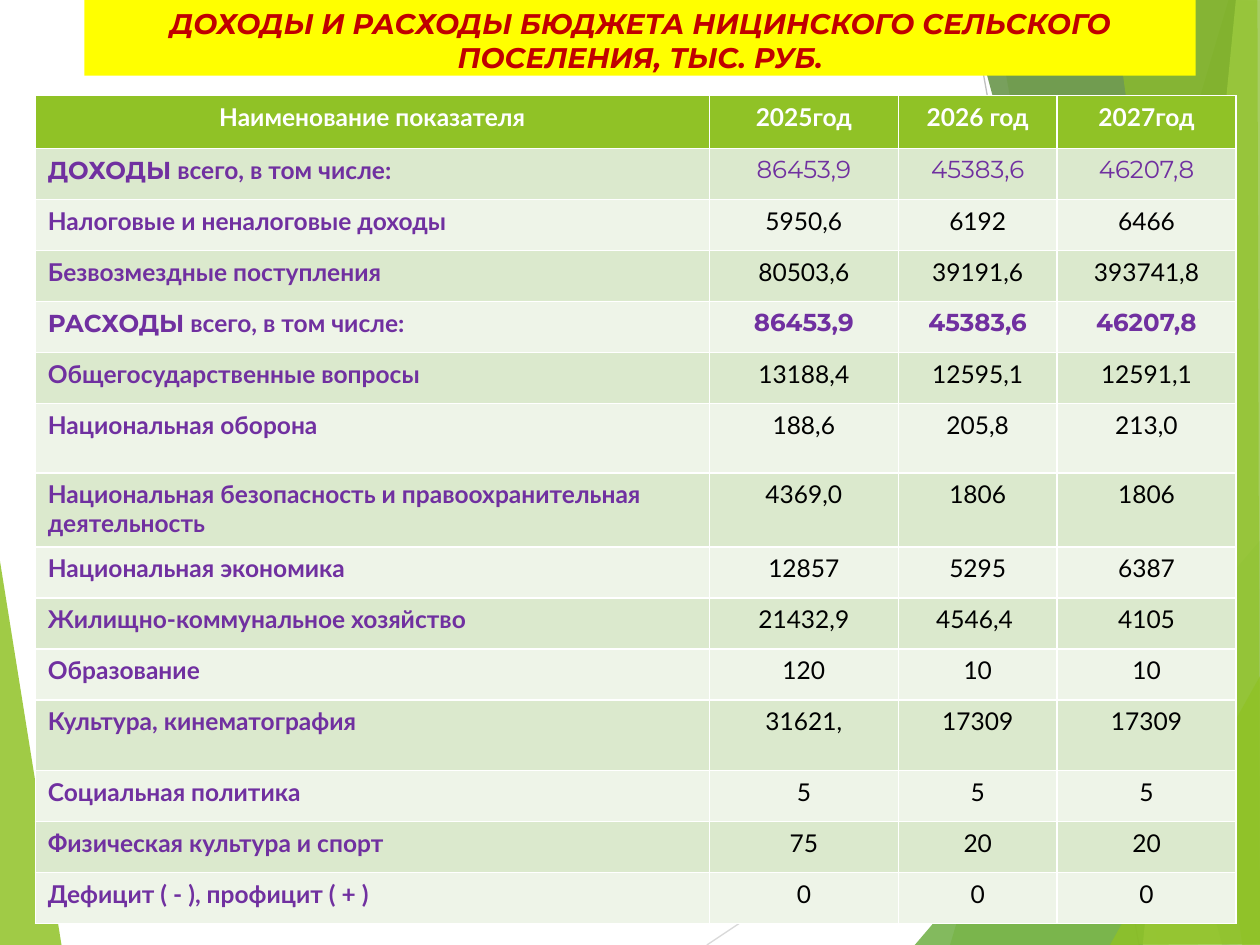
from lxml.etree import SubElement
from pptx import Presentation
from pptx.dml.color import RGBColor
from pptx.enum.shapes import MSO_CONNECTOR
from pptx.enum.text import MSO_ANCHOR, MSO_AUTO_SIZE, PP_ALIGN
from pptx.oxml.ns import qn
from pptx.util import Inches, Pt

GREEN = RGBColor(0x90, 0xC2, 0x26)
MID_GREEN = RGBColor(0x54, 0xA0, 0x21)
DARK_GREEN = RGBColor(0x3F, 0x78, 0x19)
LIME = RGBColor(0xC0, 0xE4, 0x74)
BANDS = RGBColor(0xDB, 0xE9, 0xCD), RGBColor(0xEE, 0xF4, 0xE8)
YELLOW = RGBColor(0xFF, 0xFF, 0x00)
RED = RGBColor(0xC0, 0x00, 0x00)
PURPLE = RGBColor(0x70, 0x30, 0xA0)
BLACK = RGBColor(0x00, 0x00, 0x00)
WHITE = RGBColor(0xFF, 0xFF, 0xFF)
GREY = RGBColor(0xD9, 0xD9, 0xD9)
MID_GREY = RGBColor(0xBF, 0xBF, 0xBF)
TEXT_FONT, ACCENT_FONT = "Lato", "Montserrat"

TITLE = "ДОХОДЫ И РАСХОДЫ БЮДЖЕТА НИЦИНСКОГО СЕЛЬСКОГО ПОСЕЛЕНИЯ, ТЫС. РУБ."
HEADER = ["Наименование показателя", "2025год", "2026 год", "2027год"]
INCOME, EXPENSES = "ДОХОДЫ", "РАСХОДЫ"
BUDGET = [
    [INCOME + " всего, в том числе:", "86453,9", "45383,6", "46207,8"],
    ["Налоговые и неналоговые доходы", "5950,6", "6192", "6466"],
    ["Безвозмездные поступления", "80503,6", "39191,6", "393741,8"],
    [EXPENSES + " всего, в том числе:", "86453,9", "45383,6", "46207,8"],
    ["Общегосударственные вопросы", "13188,4", "12595,1", "12591,1"],
    ["Национальная оборона", "188,6", "205,8", "213,0"],
    ["Национальная безопасность и правоохранительная деятельность",
     "4369,0", "1806", "1806"],
    ["Национальная экономика", "12857", "5295", "6387"],
    ["Жилищно-коммунальное хозяйство", "21432,9", "4546,4 ", "4105"],
    ["Образование", "120", "10", "10"],
    ["Культура, кинематография", "31621,", "17309", "17309"],
    ["Социальная политика", "5", "5", "5"],
    ["Физическая культура и спорт", "75", "20", "20"],
    ["Дефицит ( - ), профицит ( + )", "0", "0", "0"],
]
COLUMN_WIDTHS = [5.35, 1.5, 1.26, 1.42]
ROW_HEIGHT = 0.405
SPECIAL_HEIGHTS = {0: 0.42, 6: 0.55, 7: 0.59, 11: 0.56}

# Corner points, colour, opacity in percent
LEFT_FACET = ([(-0.01, 4.39), (0.49, 7.51), (-0.01, 7.5)], GREEN, 85)
RIGHT_FACETS = [
    ([(9.75, 0), (7.54, 7.5), (10.02, 7.51), (10.01, 0.01)], GREEN, 30),
    ([(7.88, -0.01), (9.19, 7.5), (10.01, 7.5), (10.01, -0.01)], GREEN, 20),
    ([(7.26, 7.5), (10, 4.29), (10.01, 7.5)], MID_GREEN, 72),
    ([(7.67, -0.01), (9.7, 7.5), (10.01, 7.49), (10.01, -0.01)], DARK_GREEN, 70),
    ([(9.81, -0.01), (9.07, 7.5), (10.01, 7.5), (10, -0.01)], LIME, 70),
    ([(8.83, -0.01), (9.86, 7.5), (10, 7.5), (9.98, -0.01)], GREEN, 65),
    ([(8.81, 7.5), (10.01, 5.35), (10.01, 7.49)], GREEN, 80),
]
RAYS = [((5.61, 7.5), (10.01, 4.57), GREY), ((7.7, 0), (9.04, 7.5), MID_GREY)]


def add_facet(shapes, corners, color, opacity):
    points = [(Inches(x), Inches(y)) for x, y in corners]
    builder = shapes.build_freeform(*points[0])
    builder.add_line_segments(points[1:], close=True)
    facet = builder.convert_to_shape()
    facet.shadow.inherit = False
    facet.line.fill.background()
    facet.fill.solid()
    facet.fill.fore_color.rgb = color
    fill_color = facet.element.spPr.find(qn("a:solidFill")).find(qn("a:srgbClr"))
    SubElement(fill_color, qn("a:alpha"), val=str(opacity * 1000))


def add_ray(shapes, start, end, color):
    ray = shapes.add_connector(
        MSO_CONNECTOR.STRAIGHT, *(Inches(v) for v in start + end))
    ray.line.color.rgb = color
    ray.line.width = Pt(0.75)
    SubElement(ray.element.spPr, qn("a:effectLst"))


def style_font(font, name, size, color, bold):
    font.name, font.size, font.bold = name, Pt(size), bold
    font.color.rgb = color


def place_title(slide):
    title = slide.shapes.title
    slide.shapes.element.append(title.element)  # in front of the facets
    title.left, title.top = Inches(0.67), Inches(0)
    title.width, title.height = Inches(8.82), Inches(0.6)
    title.fill.solid()
    title.fill.fore_color.rgb = YELLOW
    frame = title.text_frame
    frame.text = TITLE
    frame.word_wrap = True
    frame.auto_size = MSO_AUTO_SIZE.NONE
    frame.vertical_anchor = MSO_ANCHOR.TOP
    paragraph = frame.paragraphs[0]
    paragraph.alignment = PP_ALIGN.CENTER
    style_font(paragraph.font, ACCENT_FONT, 16.2, RED, True)
    paragraph.font.italic = True


def fill_cell(cell, text, row, column):
    lead = next((w for w in (INCOME, EXPENSES) if BUDGET[row - 1][0].startswith(w)),
                "") if row else ""
    name, color, bold = TEXT_FONT, BLACK, False
    if row == 0:
        color, bold = WHITE, True
    elif column == 0:
        color, bold = PURPLE, True
    elif lead:
        name, color, bold = ACCENT_FONT, PURPLE, lead == EXPENSES

    cell.fill.solid()
    cell.fill.fore_color.rgb = BANDS[(row - 1) % 2] if row else GREEN
    paragraph = cell.text_frame.paragraphs[0]
    paragraph.alignment = PP_ALIGN.CENTER if column or not row else PP_ALIGN.LEFT
    style_font(paragraph.font, name, 14, color, bold)
    if column == 0 and lead:
        lead_run = paragraph.add_run()
        lead_run.text = lead
        lead_run.font.name = ACCENT_FONT
        text = text.removeprefix(lead)
    paragraph.add_run().text = text


def add_budget_table(shapes):
    rows = [HEADER] + BUDGET
    heights = [SPECIAL_HEIGHTS.get(i, ROW_HEIGHT) for i in range(len(rows))]
    table = shapes.add_table(
        len(rows), len(HEADER), Inches(0.28), Inches(0.76),
        Inches(sum(COLUMN_WIDTHS)), Inches(sum(heights))).table
    for column, width in zip(table.columns, COLUMN_WIDTHS):
        column.width = Inches(width)
    for r, (texts, height) in enumerate(zip(rows, heights)):
        table.rows[r].height = Inches(height)
        for c, text in enumerate(texts):
            fill_cell(table.cell(r, c), text, r, c)


def main():
    deck = Presentation()
    deck.slide_width, deck.slide_height = Inches(10), Inches(7.5)
    slide = deck.slides.add_slide(deck.slide_layouts[5])
    add_facet(slide.shapes, *LEFT_FACET)
    for ray in RAYS:
        add_ray(slide.shapes, *ray)
    for facet in RIGHT_FACETS:
        add_facet(slide.shapes, *facet)
    place_title(slide)
    add_budget_table(slide.shapes)
    deck.save("out.pptx")


if __name__ == "__main__":
    main()
